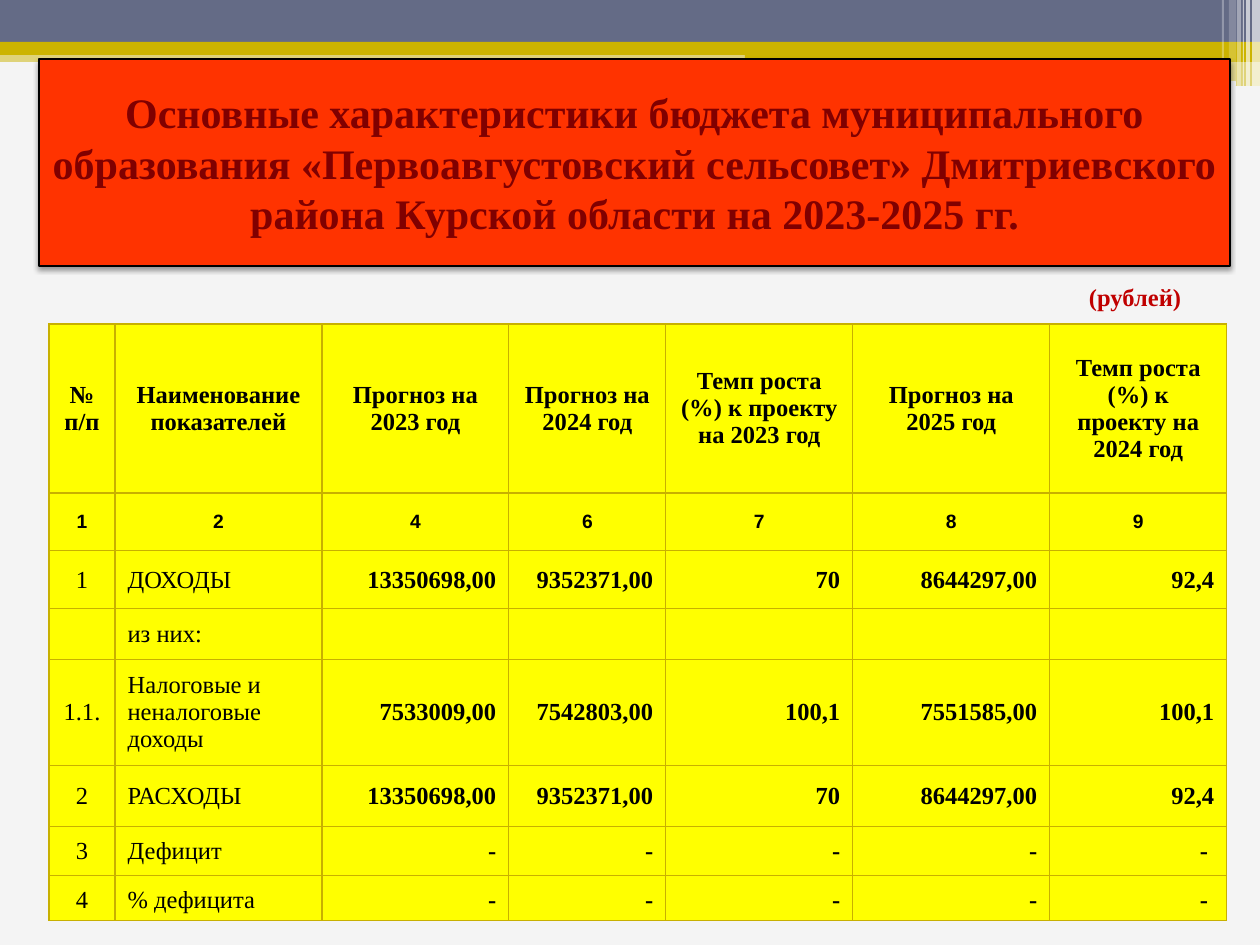
from lxml.etree import SubElement
from pptx import Presentation
from pptx.dml.color import RGBColor as RGB
from pptx.enum.shapes import MSO_SHAPE as SHAPE
from pptx.enum.text import MSO_ANCHOR as ANCHOR, PP_ALIGN as ALIGN
from pptx.oxml.ns import qn
from pptx.util import Emu, Pt

COLORS = {
    "paper": "F4F4F4", "slate": "646B86", "gold": "CCB400", "white": "FFFFFF",
    "red": "FF3300", "maroon": "800000", "crimson": "C00000",
    "black": "000000", "yellow": "FFFF00", "grid": "C8B000",
}


def px(*lengths):
    return [Emu(round(length * 914400 / 126)) for length in lengths]


def write(frame, text, align, size, color, bold, face="Times New Roman"):
    paragraph = frame.paragraphs[0]
    paragraph.alignment = align
    run = paragraph.add_run()
    run.text = text
    run.font.color.rgb = RGB.from_string(COLORS[color])
    for key, value in {"name": face, "size": Pt(size), "bold": bold}.items():
        setattr(run.font, key, value)


deck = Presentation()
deck.slide_width, deck.slide_height = px(1260, 945)
slide = deck.slides.add_slide(deck.slide_layouts[6])
slide.background.fill.solid()
slide.background.fill.fore_color.rgb = RGB.from_string(COLORS["paper"])

stripes = [
    (0, 50, 1260, 12, "gold", 50),
    (0, 0, 1260, 42, "slate", 100),
    (0, 42, 1260, 13, "gold", 100),
    (745, 49, 515, 13, "gold", 100),
    (745, 61, 515, 25, "gold", 50),
    (1016, 81, 220, 5, "paper", 100),
    (1252, 0, 8, 86, "white", 65),
    (1246, 0, 4, 86, "white", 65),
    (1243, 0, 1, 86, "white", 60),
    (1237, 0, 4, 86, "white", 40),
    (1229, 0, 7, 81, "white", 20),
    (1222, 0, 2, 81, "white", 30),
]
for left, top, width, height, color, opacity in stripes:
    kind = SHAPE.ROUNDED_RECTANGLE if color == "paper" else SHAPE.RECTANGLE
    stripe = slide.shapes.add_shape(kind, *px(left, top, width, height))
    stripe.shadow.inherit = False
    stripe.line.fill.background()
    stripe.fill.solid()
    stripe.fill.fore_color.rgb = RGB.from_string(COLORS[color])
    if opacity < 100:
        tint = stripe.fill._xPr.find(qn("a:solidFill"))[0]
        SubElement(tint, qn("a:alpha"), val=str(opacity * 1000))

title = slide.shapes.add_shape(SHAPE.RECTANGLE, *px(39, 59, 1191, 207))
title.fill.solid()
title.fill.fore_color.rgb = RGB.from_string(COLORS["red"])
title.line.color.rgb = RGB.from_string(COLORS["black"])
title.line.width = Pt(0.75)
title.shadow.inherit = False
effects = title._element.spPr.find(qn("a:effectLst"))
shadow = SubElement(effects, qn("a:outerShdw"), blurRad=str(Pt(3.1)),
                    dist=str(Pt(1.6)), dir="5400000", rotWithShape="0")
shade = SubElement(shadow, qn("a:srgbClr"), val=COLORS["black"])
SubElement(shade, qn("a:alpha"), val="38000")
title.text_frame.word_wrap = True
title.text_frame.vertical_anchor = ANCHOR.MIDDLE
write(title.text_frame,
      "Основные характеристики бюджета муниципального образования "
      "«Первоавгустовский сельсовет» Дмитриевского района Курской области "
      "на 2023-2025 гг.", ALIGN.CENTER, 24, "maroon", True)

unit = slide.shapes.add_textbox(*px(1046, 276, 179, 43))
unit.text_frame.word_wrap = True
unit.text_frame.margin_left = px(43)[0]
write(unit.text_frame, "(рублей)", ALIGN.LEFT, 14, "crimson", True)

budget = [
    ["№ п/п", "Наименование показателей", "Прогноз на 2023 год",
     "Прогноз на 2024 год", "Темп роста (%) к проекту на 2023 год",
     "Прогноз на 2025 год", "Темп роста (%) к проекту на 2024 год"],
    ["1", "2", "4", "6", "7", "8", "9"],
    ["1", "ДОХОДЫ", "13350698,00", "9352371,00", "70", "8644297,00", "92,4"],
    ["", "из них:", "", "", "", "", ""],
    ["1.1.", "Налоговые и неналоговые доходы", "7533009,00", "7542803,00",
     "100,1", "7551585,00", "100,1"],
    ["2", "РАСХОДЫ", "13350698,00", "9352371,00", "70", "8644297,00", "92,4"],
    ["3", "Дефицит", "-", "-", "-", "-", "- "],
    ["4", "% дефицита", "-", "-", "-", "-", "- "],
]
column_widths = px(66, 207, 187, 157, 187, 197, 177)
row_heights = px(169, 58, 58, 50, 106, 61, 49, 45)
table = slide.shapes.add_table(
    len(budget), len(column_widths), *px(49, 324),
    sum(column_widths), sum(row_heights)).table
table.first_row = table.horz_banding = False
for column, width in zip(table.columns, column_widths):
    column.width = width
for row, height in zip(table.rows, row_heights):
    row.height = height

for r, values in enumerate(budget):
    for c, value in enumerate(values):
        cell = table.cell(r, c)
        borders = cell._tc.get_or_add_tcPr()
        for side in ("lnL", "lnR", "lnT", "lnB"):
            border = SubElement(borders, qn(f"a:{side}"), w=str(Pt(0.75)))
            paint = SubElement(border, qn("a:solidFill"))
            SubElement(paint, qn("a:srgbClr"), val=COLORS["grid"])
        cell.fill.solid()
        cell.fill.fore_color.rgb = RGB.from_string(COLORS["yellow"])
        cell.vertical_anchor = ANCHOR.BOTTOM if r == 7 else ANCHOR.MIDDLE
        if r < 2 or c == 0:
            align = ALIGN.CENTER
        else:
            align = ALIGN.LEFT if c == 1 else ALIGN.RIGHT
        size, face = (11, "Arial") if r == 1 else (14, "Times New Roman")
        write(cell.text_frame, value, align, size, "black", r < 2 or c > 1, face)

deck.save("out.pptx")
